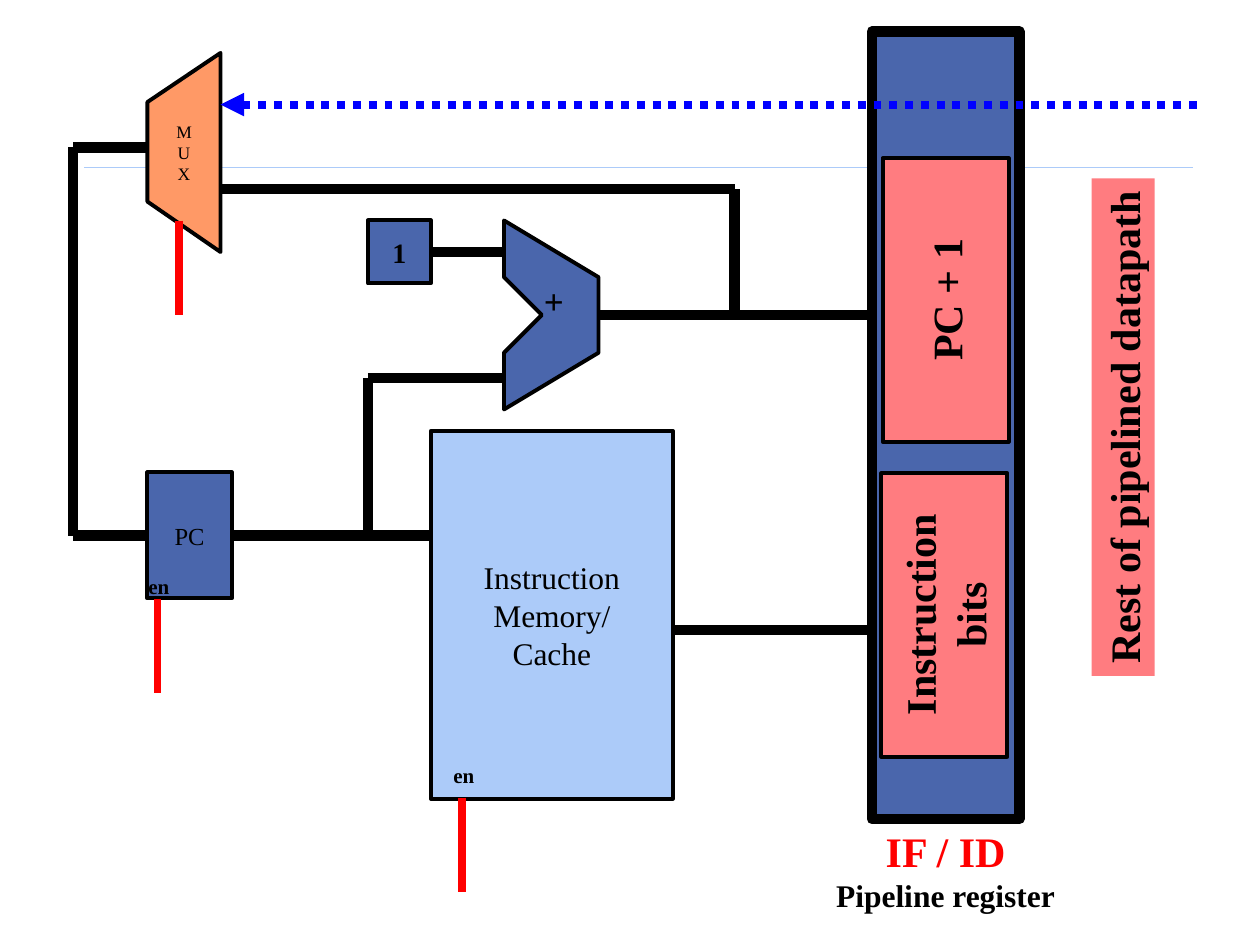
from itertools import pairwise

from lxml.etree import SubElement
from pptx import Presentation
from pptx.dml.color import RGBColor
from pptx.enum.dml import MSO_LINE
from pptx.enum.shapes import MSO_CONNECTOR, MSO_SHAPE
from pptx.enum.text import MSO_ANCHOR, PP_ALIGN
from pptx.oxml.ns import qn
from pptx.util import Inches, Pt

BLACK = RGBColor(0x00, 0x00, 0x00)
RED = RGBColor(0xFF, 0x00, 0x00)
BLUE = RGBColor(0x00, 0x00, 0xFF)
NAVY = RGBColor(0x4A, 0x66, 0xAC)
SKY = RGBColor(0xAC, 0xCB, 0xF9)
PINK = RGBColor(0xFF, 0x7C, 0x80)
ORANGE = RGBColor(0xFF, 0x99, 0x66)


class Diagram:
    font = "Times New Roman"
    outline = 2.25
    wire_width = 6
    signal_width = 4.5

    def __init__(self, slide):
        self.slide = slide

    def add_run(self, paragraph, words, size, bold=False, color=BLACK):
        run = paragraph.add_run()
        run.text = words
        run.font.name = self.font
        run.font.size = Pt(size)
        run.font.bold = bold
        run.font.color.rgb = color

    def add_lines(self, shape, lines, align=PP_ALIGN.CENTER, anchor=MSO_ANCHOR.MIDDLE, wrap=False):
        frame = shape.text_frame
        frame.word_wrap = wrap
        frame.vertical_anchor = anchor
        for index, runs in enumerate(lines):
            paragraph = frame.add_paragraph() if index else frame.paragraphs[0]
            paragraph.alignment = align
            for run in runs:
                self.add_run(paragraph, *run)

    def paint(self, shape, fill, outline):
        shape.shadow.inherit = False
        shape.fill.solid()
        shape.fill.fore_color.rgb = fill
        if outline:
            shape.line.color.rgb = BLACK
            shape.line.width = Pt(outline)
        else:
            shape.line.fill.background()

    def box(self, left, top, width, height, fill, lines=(), outline=outline, rotation=0, **layout):
        shape = self.slide.shapes.add_shape(
            MSO_SHAPE.RECTANGLE, Inches(left), Inches(top), Inches(width), Inches(height))
        shape.rotation = rotation
        self.paint(shape, fill, outline)
        self.add_lines(shape, lines, **layout)

    def label(self, left, top, width, height, lines, align=PP_ALIGN.LEFT, wrap=False):
        text_box = self.slide.shapes.add_textbox(
            Inches(left), Inches(top), Inches(width), Inches(height))
        self.add_lines(text_box, lines, align, MSO_ANCHOR.TOP, wrap)

    def polygon(self, points, fill, lines=()):
        start, *rest = [(Inches(x), Inches(y)) for x, y in points]
        builder = self.slide.shapes.build_freeform(*start)
        builder.add_line_segments(rest, close=True)
        shape = builder.convert_to_shape()
        self.paint(shape, fill, self.outline)
        self.add_lines(shape, lines)

    def line(self, start, end, color, width):
        connector = self.slide.shapes.add_connector(
            MSO_CONNECTOR.STRAIGHT, *map(Inches, (*start, *end)))
        connector.line.color.rgb = color
        connector.line.width = Pt(width)
        SubElement(connector._element.spPr, qn("a:effectLst"))
        return connector

    def wire(self, *points):
        for start, end in pairwise(points):
            self.line(start, end, BLACK, self.wire_width)

    def control(self, x, top):
        self.line((x, top), (x, top + 0.75), RED, self.signal_width)

    def feedback(self, tip, tail):
        connector = self.line(tip, tail, BLUE, self.signal_width)
        connector.line.dash_style = MSO_LINE.ROUND_DOT
        SubElement(connector.line._ln, qn("a:headEnd"), type="triangle")


def main():
    presentation = Presentation()
    presentation.slide_width = Inches(10)
    presentation.slide_height = Inches(7.5)
    slide = presentation.slides.add_slide(presentation.slide_layouts[6])
    diagram = Diagram(slide)

    diagram.line((0.67, 1.33), (9.47, 1.33), SKY, 0.25)

    diagram.box(6.92, 0.25, 1.17, 6.25, NAVY, outline=6)
    diagram.box(6.37, 4.38, 2.25, 1, PINK,
                [[("Instruction", 24, True)], [("bits", 24, True)]], rotation=270)
    diagram.label(6.17, 6.5, 2.67, 0.8,
                  [[("IF / ID", 24, True, RED)], [("Pipeline register", 18, True)]],
                  align=PP_ALIGN.CENTER, wrap=True)

    diagram.box(1.17, 3.75, 0.67, 1, NAVY, [[("PC", 14)]])
    diagram.box(3.42, 3.42, 1.92, 2.92, SKY,
                [[(word, 18)] for word in ("Instruction", "Memory/", "Cache")])
    diagram.wire((5.33, 5), (6.92, 5))
    diagram.control(1.25, 4.75)
    diagram.control(3.67, 6.33)
    for left, top in ((1.08, 4.5), (3.5, 6)):
        diagram.label(left, top, 0.37, 0.3, [[("en", 12, True)]])
    diagram.wire((1.83, 4.25), (3.42, 4.25))

    diagram.box(2.92, 1.75, 0.5, 0.5, NAVY, [[("1", 16, True)]])
    adder = [(4, 1.75), (4.75, 2.2), (4.75, 2.8), (4, 3.25), (4, 2.8), (4.3, 2.5), (4, 2.2)]
    diagram.polygon(adder, NAVY)
    diagram.label(4.17, 2.17, 0.41, 0.43, [[(" ", 14, True), ("+", 20, True)]])
    mux = [(1.75, 2), (1.17, 1.6), (1.17, 0.81), (1.75, 0.42)]
    diagram.polygon(mux, ORANGE, [[(letter, 10)] for letter in "MUX"])

    diagram.wire((4.75, 2.5), (5.83, 2.5), (5.83, 1.5), (1.75, 1.5))
    diagram.wire((1.17, 1.17), (0.58, 1.17), (0.58, 4.25), (1.17, 4.25))
    diagram.control(1.42, 1.75)
    diagram.wire((3.42, 2), (4, 2))
    diagram.wire((2.92, 4.25), (2.92, 3), (4, 3))

    diagram.feedback((1.75, 0.83), (9.5, 0.83))
    diagram.box(6.94, 3.14, 3.95, 0.5, PINK, [[("Rest of pipelined datapath", 24, True)]],
                outline=0, rotation=270, align=PP_ALIGN.LEFT, anchor=MSO_ANCHOR.TOP)
    diagram.box(6.38, 1.88, 2.25, 1, PINK, [[("PC + 1", 24, True)]], rotation=270)
    diagram.wire((5.83, 2.5), (6.92, 2.5))

    presentation.save("out.pptx")


if __name__ == "__main__":
    main()
